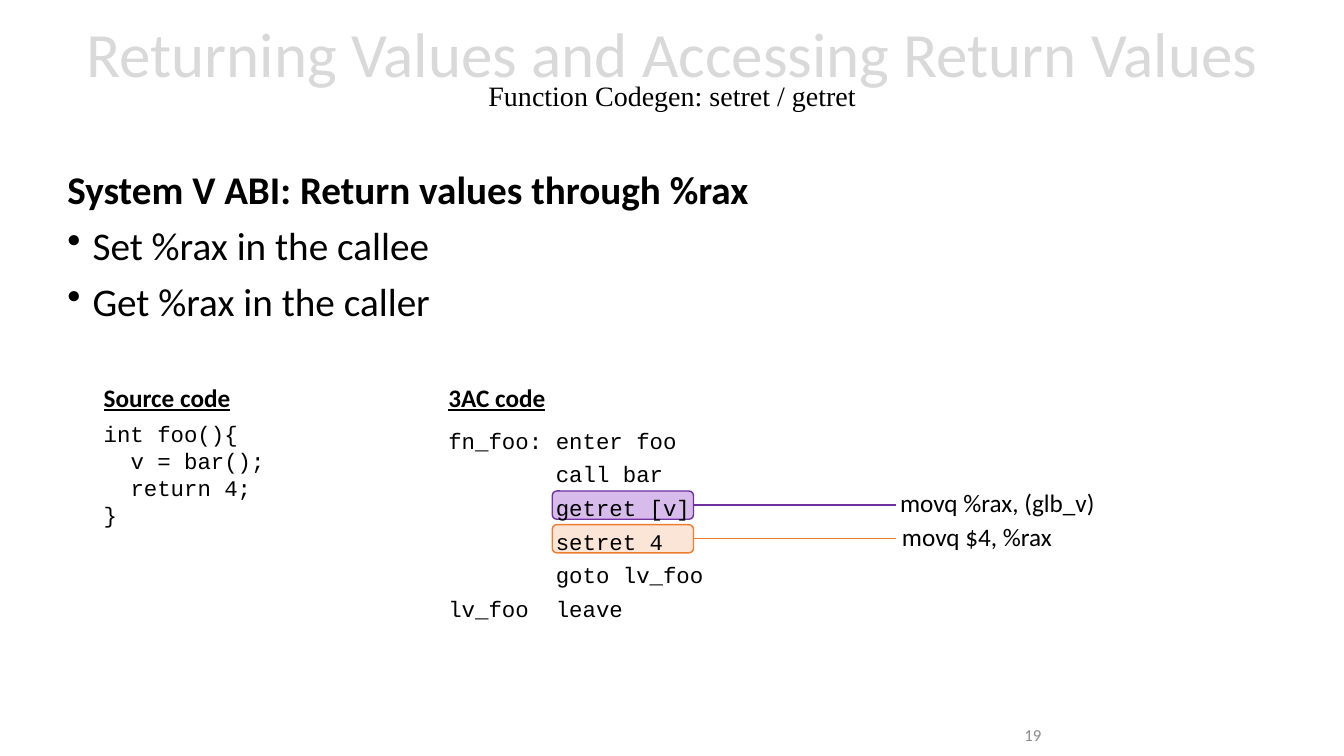
import pptx
import pptx.dml.color
import pptx.enum.shapes
import pptx.enum.text
import pptx.oxml
import pptx.oxml.ns
import pptx.util

Pt = pptx.util.Pt
ALIGN = pptx.enum.text.PP_ALIGN
ANCHOR = pptx.enum.text.MSO_ANCHOR
SANS, SERIF, MONO = "Calibri", "Times New Roman", "Courier New"


def rgb(value):
    return pptx.dml.color.RGBColor.from_string(value)


def add_run(p, text, size=18, font=SANS, color="000000", bold=False, underline=False):
    r = p.add_run()
    r.text = text
    r.font.size = Pt(size)
    r.font.name = font
    r.font.color.rgb = rgb(color)
    r.font.bold = bold
    r.font.underline = underline


def set_indent(p, left, first=0, bullet=None):
    """Set the left margin and first-line offset, with an optional bullet."""
    pPr = p._p.get_or_add_pPr()
    pPr.set("marL", str(Pt(left)))
    pPr.set("indent", str(Pt(first)))
    if bullet:
        bu = pptx.oxml.parse_xml(f'<a:buChar {pptx.oxml.ns.nsdecls("a")} char="{bullet}"/>')
        pPr.append(bu)


class Deck:
    """Holds the presentation, its current slide and the shared style."""

    def __init__(self, width, height):
        self.prs = pptx.Presentation()
        self.prs.slide_width, self.prs.slide_height = Pt(width), Pt(height)
        self.s = self.prs.slides.add_slide(self.prs.slide_layouts[5])

    def title(self, heading, subtitle, x, y, w, h):
        sp = self.s.shapes.title
        sp.left, sp.top, sp.width, sp.height = Pt(x), Pt(y), Pt(w), Pt(h)
        tf = sp.text_frame
        tf.auto_size = pptx.enum.text.MSO_AUTO_SIZE.NONE
        tf.vertical_anchor = ANCHOR.MIDDLE
        p = tf.paragraphs[0]
        p.alignment = ALIGN.CENTER
        p.line_spacing = 0.7
        add_run(p, heading, size=45, color="D9D9D9")
        p.add_line_break()
        add_run(p, subtitle, size=20, font=SERIF)

    def text(self, lines, x, y, w, h, align=ALIGN.LEFT, anchor=ANCHOR.TOP,
             spacing=None, before=0, **fmt):
        """Add a text box and return its paragraphs, one per line."""
        tf = self.s.shapes.add_textbox(Pt(x), Pt(y), Pt(w), Pt(h)).text_frame
        tf.word_wrap = True
        tf.vertical_anchor = anchor
        for i, line in enumerate(lines):
            p = tf.add_paragraph() if i else tf.paragraphs[0]
            p.alignment = align
            p.space_before = Pt(before)
            if spacing:
                p.line_spacing = spacing
            add_run(p, line, **fmt)
        return tf.paragraphs

    def highlight(self, x, y, w, h, fill, line):
        sp = self.s.shapes.add_shape(
            pptx.enum.shapes.MSO_SHAPE.ROUNDED_RECTANGLE, Pt(x), Pt(y), Pt(w), Pt(h))
        sp.shadow.inherit = False
        sp.fill.solid()
        sp.fill.fore_color.rgb = rgb(fill)
        sp.line.color.rgb = rgb(line)
        sp.line.width = Pt(1)

    def line(self, x1, x2, y, color):
        cn = self.s.shapes.add_connector(
            pptx.enum.shapes.MSO_CONNECTOR.STRAIGHT, Pt(x1), Pt(y), Pt(x2), Pt(y))
        cn.line.color.rgb = rgb(color)
        cn.line.width = Pt(1)
        effects = pptx.oxml.parse_xml(f'<a:effectLst {pptx.oxml.ns.nsdecls("a")}/>')
        cn._element.spPr.append(effects)


def main():
    deck = Deck(960, 540)
    deck.title("Returning Values and Accessing Return Values",
               "Function Codegen: setret / getret", 0.72, 0, 959, 104.4)

    body = deck.text(["System V ABI: Return values through %rax",
                      "Set %rax in the callee", "Get %rax in the caller"],
                     41, 118, 620.6, 342.7, spacing=0.9, before=10, size=28)
    body[0].runs[0].font.bold = True
    for p in body[1:]:
        set_indent(p, 18, -18, "•")

    source_x, code_x = 67, 313.2
    for label, x, w in (("Source code", source_x, 108), ("3AC code", code_x, 88)):
        deck.text([label], x, 269.3, w, 29, bold=True, underline=True)

    source = deck.text(["int foo(){", "v = bar();", "return 4;", "}"],
                       source_x, 296.6, 141, 85, size=16, font=MONO)
    for p in source[1:3]:
        set_indent(p, 19.2)

    row_h = 24
    calls = (("movq %rax, (glb_v)", 635.8, 155.5, "D6BBEB", "7030A0"),
             ("movq $4, %rax", 637.2, 123.1, "FBE5D6", "ED7D31"))
    for i, (asm, x, w, fill, color) in enumerate(calls):
        y = 360.7 + i * row_h
        deck.line(495.4, 640, y, color)
        deck.highlight(394.5, y - 10, 100.9, 20.2, fill, color)
        deck.text([asm], x, y - 15.9, w, 29)

    code = deck.text(["fn_foo:\tenter foo", "call bar", "getret [v]", "setret 4",
                      "goto lv_foo", "lv_foo\tleave"],
                     code_x, 296.6, 199.4, 151.2, spacing=Pt(row_h), size=16, font=MONO)
    opcode_x = 76.8
    for p in code:
        set_indent(p, opcode_x, -opcode_x if "\t" in p.text else 0)

    deck.text(["19"], 589, 510.5, 162, 28.8, align=ALIGN.RIGHT, anchor=ANCHOR.MIDDLE,
              size=12, color="8C8C8C")
    deck.prs.save("out.pptx")


if __name__ == "__main__":
    main()
